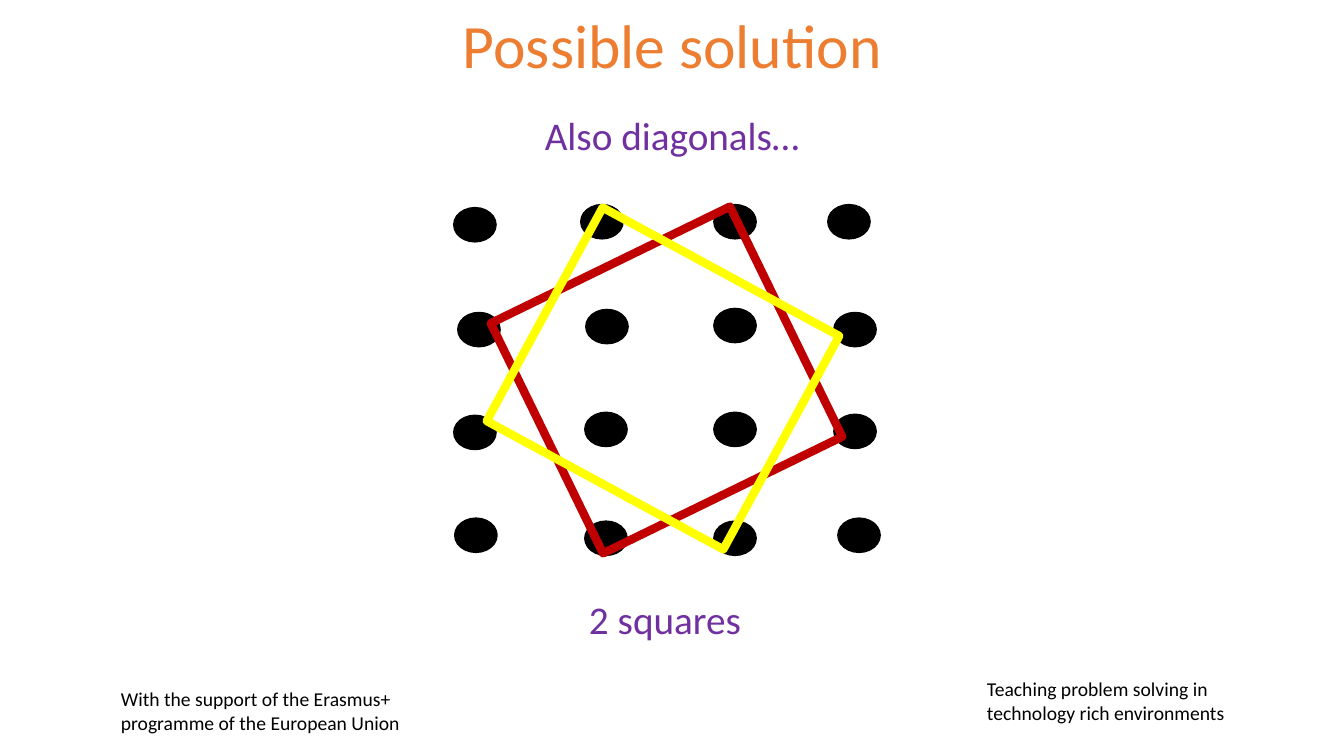
import pptx
import pptx.util
import pptx.dml.color
import pptx.enum.shapes
import pptx.enum.text
from dataclasses import dataclass

ALIGN = pptx.enum.text.PP_ALIGN
ANCHOR = pptx.enum.text.MSO_ANCHOR
KIND = pptx.enum.shapes.MSO_SHAPE
inch = pptx.util.Inches


@dataclass(frozen=True)
class Theme:
    font: str = "Calibri"
    title: str = "ED7D31"
    label: str = "7030A0"
    ink: str = "000000"
    red: str = "C00000"
    yellow: str = "FFFF00"
    big: int = 44
    mid: int = 28
    small: int = 14
    edge: int = 6
    rim: int = 1


THEME = Theme()
WIDE, HIGH = 13.33, 7.5
DOT = (0.42, 0.34)
COLS = (0, 1.3, 2.58, 3.77)
ROWS = (0, 1.04, 2.07, 3.12)
NUDGES = (
    ((0, 0.03), (-0.04, 0), (0, 0), (-0.06, 0)),
    ((0.04, 0.03), (0.01, 0), (0, -0.01), (0, 0.03)),
    ((0, 0.02), (0, -0.01), (0, -0.01), (0, 0.01)),
    ((0.01, -0.01), (0, 0.02), (0, 0.02), (0.04, -0.01)),
)


def color(code):
    return pptx.dml.color.RGBColor.from_string(code)


def write(slide, text, box, size, tint, align=ALIGN.LEFT, anchor=ANCHOR.TOP,
          lead=1.0, after=0):
    frame = slide.shapes.add_textbox(*map(inch, box)).text_frame
    frame.word_wrap = True
    frame.vertical_anchor = anchor
    para = frame.paragraphs[0]
    para.alignment = align
    para.line_spacing = lead
    para.space_after = pptx.util.Pt(after)
    run = para.add_run()
    run.text = text
    run.font.name = THEME.font
    run.font.size = pptx.util.Pt(size)
    run.font.color.rgb = color(tint)


def draw(slide, kind, box, line, width, fill=None, turn=0):
    shape = slide.shapes.add_shape(kind, *map(inch, box))
    shape.shadow.inherit = False
    shape.rotation = turn
    if fill:
        shape.fill.solid()
        shape.fill.fore_color.rgb = color(fill)
    else:
        shape.fill.background()
    shape.line.color.rgb = color(line)
    shape.line.width = pptx.util.Pt(width)


def header(slide, left, top, width):
    write(slide, "Possible solution", (left + 0.8, top, width - 1.59, 0.85),
          THEME.big, THEME.title, ALIGN.CENTER, ANCHOR.MIDDLE, lead=0.9)
    write(slide, "Also diagonals…", (left, top + 1, width, 0.57),
          THEME.mid, THEME.label, ALIGN.CENTER)


def board(slide, left, top):
    for row, line in zip(ROWS, NUDGES):
        for col, (right, down) in zip(COLS, line):
            draw(slide, KIND.OVAL,
                 (left + col + right, top + row + down, *DOT),
                 THEME.ink, THEME.rim, fill=THEME.ink)
    draw(slide, KIND.RECTANGLE, (left + 0.84, top + 0.42, 2.54, 2.64),
         THEME.red, THEME.edge, turn=64)
    draw(slide, KIND.RECTANGLE, (left + 0.87, top + 0.39, 2.41, 2.67),
         THEME.yellow, THEME.edge, turn=118.5)


def caption(slide, left, top, width):
    write(slide, "2 squares", (left, top, width, 0.57),
          THEME.mid, THEME.label, ALIGN.CENTER)


def footer(slide, left, top):
    write(slide, "With the support of the Erasmus+ programme of the European Union",
          (left, top + 0.1, 2.98, 0.58), THEME.small, THEME.ink, after=4.5)
    write(slide, "Teaching problem solving in technology rich environments",
          (left + 8.59, top, 2.58, 0.57), THEME.small, THEME.ink)


def main():
    deck = pptx.Presentation()
    deck.slide_width, deck.slide_height = inch(WIDE), inch(HIGH)
    slide = deck.slides.add_slide(deck.slide_layouts[6])
    footer(slide, 1.1, 6.67)
    header(slide, 2.08, 0.06, 9.17)
    board(slide, 4.5, 2.03)
    caption(slide, 2.01, 5.86, 9.17)
    deck.save("out.pptx")


if __name__ == "__main__":
    main()
